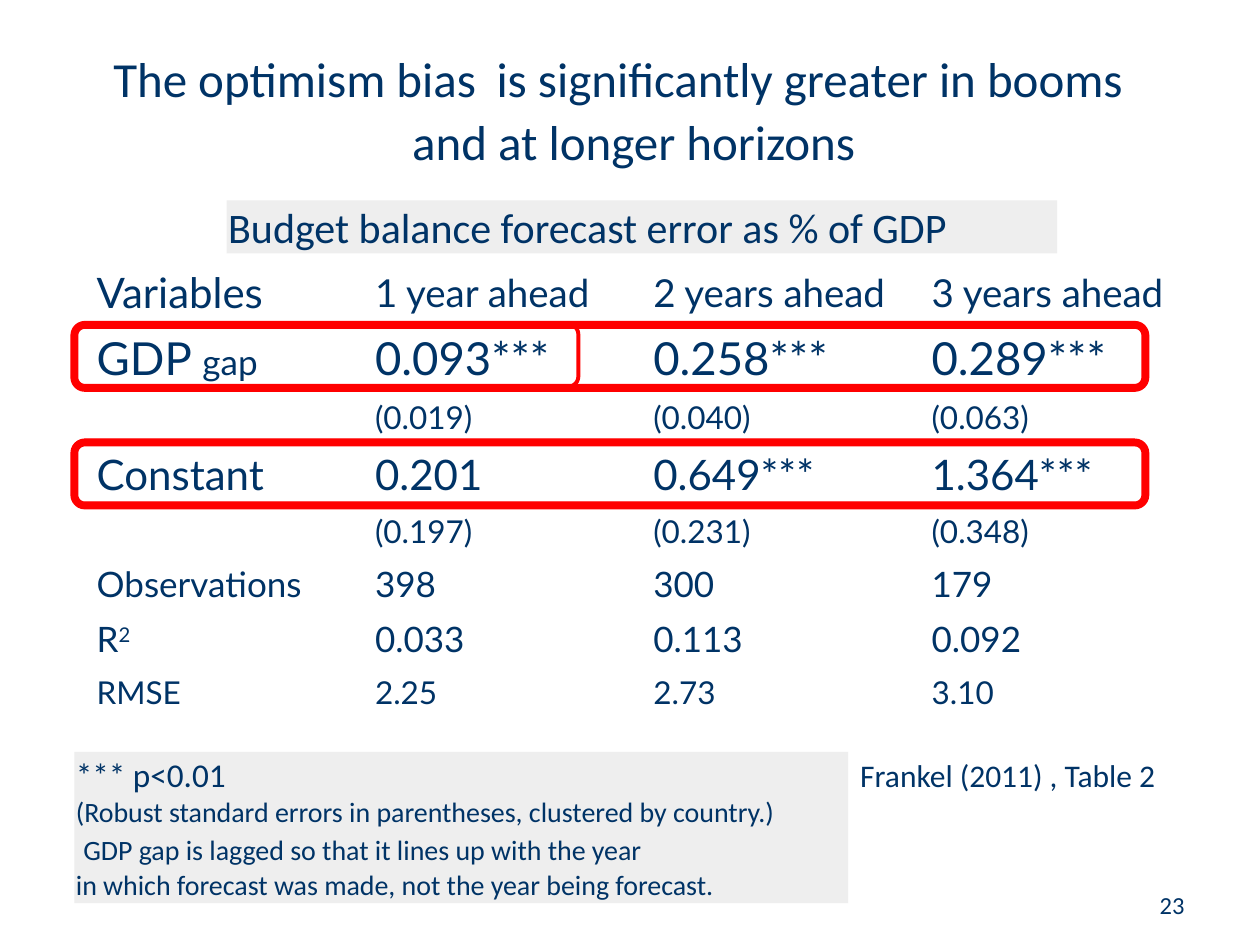
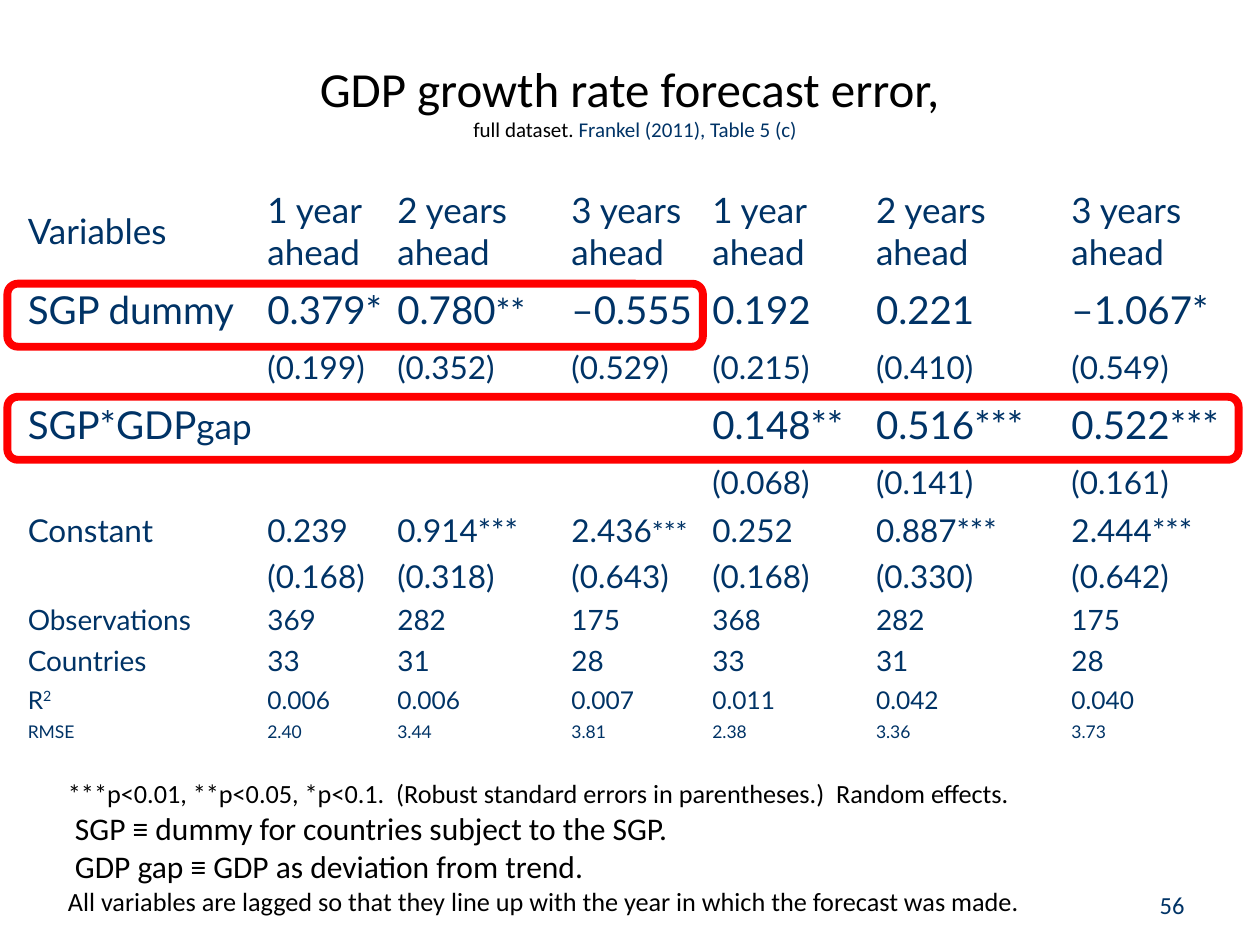
"""Build two slides of regression tables on forecast errors."""
import lxml.etree
import pptx
import pptx.dml.color
import pptx.enum.shapes
import pptx.enum.text
import pptx.oxml.ns
import pptx.util

Cm = pptx.util.Cm
ALIGN = pptx.enum.text.PP_ALIGN
ANCHOR = pptx.enum.text.MSO_ANCHOR
AUTOSIZE = pptx.enum.text.MSO_AUTO_SIZE
SHAPE = pptx.enum.shapes.MSO_SHAPE

NAVY, BLACK, RED, GREY = "003366", "000000", "FF0000", "EEEEEE"


def colour(code):
    return pptx.dml.color.RGBColor.from_string(code)


def write(paragraph, text, size=18, font="Calibri", ink=NAVY, align=ALIGN.LEFT, superscript=False):
    paragraph.alignment = align
    for number, line in enumerate(text.split("\n")):
        if number:
            paragraph.add_line_break()
            lxml.etree.SubElement(paragraph._p[-1], pptx.oxml.ns.qn("a:rPr"), sz=str(size * 100))
        if line:
            run = paragraph.add_run()
            run.text = line
            run.font.size = pptx.util.Pt(size)
            run.font.name = font
            run.font.color.rgb = colour(ink)
            if superscript:
                run.font._element.set("baseline", "30000")


r_squared = [("R", {}), ("2", {"superscript": True})]

budget_balance = {
    "page": "23",
    "table": {
        "at": (1.7, 5.26),
        "margins": (0.25, 0.13),
        "columns": [5.61] * 4,
        "rows": [
            (1.27, 22, [[("Variables", {"size": 24})], "1 year ahead", "2 years ahead", "3 years ahead"]),
            (1.35, 26, [[("GDP ", {}), ("gap", {"size": 20})], "0.093***", "0.258***", "0.289***"]),
            (1.02, 18, ["", "(0.019)", "(0.040)", "(0.063)"]),
            (1.27, 24, ["Constant", "0.201", "0.649***", "1.364***"]),
            (1.02, 18, ["", "(0.197)", "(0.231)", "(0.348)"]),
            (1.09, 20, ["Observations", "398", "300", "179"]),
            (1.09, 20, [r_squared, "0.033", "0.113", "0.092"]),
            (1.02, 18, ["RMSE", "2.25", "2.73", "3.10"]),
        ],
    },
    "panels": [
        ((4.57, 4.04, 16.74, 1.07), [("Budget balance forecast error as % of GDP", {"size": 24})]),
        ((1.5, 15.16, 15.6, 3.05), [
            ("*** p<0.01\n", {"size": 19}),
            ("(Robust standard errors in parentheses, clustered by country.)\n", {"size": 16}),
            (" ", {"size": 19}),
            ("GDP gap is lagged so that it lines up with the year \n"
             "in which forecast was made, not the year being forecast.", {"size": 16}),
        ]),
    ],
    "labels": [
        ((1.98, 0.86, 7.92, 1.45), False, ANCHOR.TOP,
         [[("The optimism bias", {"size": 28, "align": ALIGN.CENTER})]]),
        ((9.68, 0.86, 13.28, 1.45), False, ANCHOR.TOP,
         [[("is significantly greater in booms", {"size": 28, "align": ALIGN.CENTER})]]),
        ((8.0, 2.13, 9.55, 1.45), False, ANCHOR.TOP,
         [[("and at longer horizons", {"size": 28, "align": ALIGN.CENTER})]]),
        ((17.09, 15.11, 7.09, 1.02), True, ANCHOR.TOP, [[("Frankel (2011) , Table 2", {})]]),
    ],
    "highlights": [
        ((1.5, 8.89, 21.59, 1.27), 2.25),
        ((1.5, 6.55, 21.59, 1.27), 4.5),
        ((1.5, 6.53, 10.16, 1.27), 2.25),
        ((1.5, 8.92, 21.59, 1.27), 4.5),
    ],
}

growth_rate = {
    "page": "56",
    "table": {
        "at": (0.43, 3.73),
        "margins": (0.13, 0.07),
        "columns": [4.83, 2.62, 3.51, 2.84, 3.3, 3.94, 3.51],
        "rows": [
            (1.83, 20, ["Variables"] + ["1 year ahead", "2 years ahead", "3 years ahead"] * 2),
            (1.35, 22, ["SGP dummy", "0.379*", [("0.780", {}), ("**", {"size": 20})], "–0.555",
                        "0.192", "0.221", "–1.067*"]),
            (0.97, 18, ["", "(0.199)", "(0.352)", "(0.529)", "(0.215)", "(0.410)", "(0.549)"]),
            (1.35, 22, [[("SGP*GDP", {}), ("gap", {"size": 20})], "", "", "",
                        "0.148**", "0.516***", "0.522***"]),
            (0.97, 18, ["", "", "", "", "(0.068)", "(0.141)", "(0.161)"]),
            (0.97, 18, ["Constant", "0.239", "0.914***", [("2.436", {}), ("***", {"size": 16})],
                        "0.252", "0.887***", "2.444***"]),
            (0.89, 18, ["", "(0.168)", "(0.318)", "(0.643)", "(0.168)", "(0.330)", "(0.642)"]),
            (0.84, 16, ["Observations", "369", "282", "175", "368", "282", "175"]),
            (0.81, 16, ["Countries", "33", "31", "28", "33", "31", "28"]),
            (0.74, 14, [r_squared, "0.006", "0.006", "0.007", "0.011", "0.042", "0.040"]),
            (0.56, 10, ["RMSE", "2.40", "3.44", "3.81", "2.38", "3.36", "3.73"]),
        ],
    },
    "panels": [],
    "labels": [
        ((1.12, 15.54, 19.99, 3.07), False, ANCHOR.MIDDLE, [
            [("***p<0.01, **p<0.05, *p<0.1.  (Robust standard errors in parentheses.)  Random effects.",
              {"size": 15, "ink": BLACK})],
            [(" SGP ≡ dummy for countries subject to the SGP.", {"ink": BLACK})],
            [(" GDP gap ≡ GDP as deviation from trend.", {"ink": BLACK})],
            [("All variables are lagged so that they line up with the year in which the forecast was made.",
              {"size": 15, "ink": BLACK})],
        ]),
        ((3.1, 1.04, 19.41, 1.96), True, ANCHOR.MIDDLE, [[
            ("GDP growth rate forecast error, \n", {"size": 28, "ink": BLACK, "align": ALIGN.CENTER}),
            ("full dataset. ", {"size": 12, "ink": BLACK, "align": ALIGN.CENTER}),
            ("Frankel (2011), Table 5 (c)", {"size": 12, "align": ALIGN.CENTER}),
        ]]),
    ],
    "highlights": [
        ((0.15, 8.0, 24.82, 1.27), 4.5),
        ((0.15, 5.72, 14.02, 1.27), 4.5),
    ],
}

deck = pptx.Presentation()
deck.slide_width, deck.slide_height = Cm(25.4), Cm(19.05)

for content in (budget_balance, growth_rate):
    slide = deck.slides.add_slide(deck.slide_layouts[6])

    page_number = slide.shapes.add_textbox(Cm(18.21), Cm(17.35), Cm(5.92), Cm(1.32)).text_frame
    page_number.word_wrap = True
    page_number.vertical_anchor = ANCHOR.BOTTOM
    write(page_number.paragraphs[0], content["page"], size=14, align=ALIGN.RIGHT)

    results = content["table"]
    left, top = results["at"]
    columns, rows = results["columns"], results["rows"]
    side_margin, end_margin = map(Cm, results["margins"])
    regression = slide.shapes.add_table(
        len(rows), len(columns), Cm(left), Cm(top),
        Cm(sum(columns)), Cm(sum(row[0] for row in rows))).table
    regression.first_row = regression.horz_banding = False
    for column, width in zip(regression.columns, columns):
        column.width = Cm(width)
    for row, (height, size, entries) in zip(regression.rows, rows):
        row.height = Cm(height)
        for cell, entry in zip(row.cells, entries):
            cell.fill.background()
            cell.vertical_anchor = ANCHOR.MIDDLE
            cell.margin_left = cell.margin_right = side_margin
            cell.margin_top = cell.margin_bottom = end_margin
            pieces = [(entry, {})] if isinstance(entry, str) else entry
            for text, style in pieces:
                write(cell.text_frame.paragraphs[0], text, **{"size": size, "font": "Lato", **style})

    for box, pieces in content["panels"]:
        panel = slide.shapes.add_shape(SHAPE.RECTANGLE, *map(Cm, box))
        panel.shadow.inherit = False
        panel.fill.solid()
        panel.fill.fore_color.rgb = colour(GREY)
        panel.line.fill.background()
        frame = panel.text_frame
        frame.word_wrap = True
        frame.auto_size = AUTOSIZE.SHAPE_TO_FIT_TEXT
        frame.vertical_anchor = ANCHOR.MIDDLE
        frame.margin_left = frame.margin_right = frame.margin_top = frame.margin_bottom = Cm(0.03)
        for text, style in pieces:
            write(frame.paragraphs[0], text, **style)

    for box, wraps, anchor, paragraphs in content["labels"]:
        frame = slide.shapes.add_textbox(*map(Cm, box)).text_frame
        frame.word_wrap = wraps
        frame.auto_size = AUTOSIZE.SHAPE_TO_FIT_TEXT
        frame.vertical_anchor = anchor
        for number, pieces in enumerate(paragraphs):
            paragraph = frame.add_paragraph() if number else frame.paragraphs[0]
            for text, style in pieces:
                write(paragraph, text, **style)

    for box, weight in content["highlights"]:
        highlight = slide.shapes.add_shape(SHAPE.ROUNDED_RECTANGLE, *map(Cm, box))
        highlight.shadow.inherit = False
        highlight.fill.background()
        highlight.line.color.rgb = colour(RED)
        highlight.line.width = pptx.util.Pt(weight)

deck.save("out.pptx")
